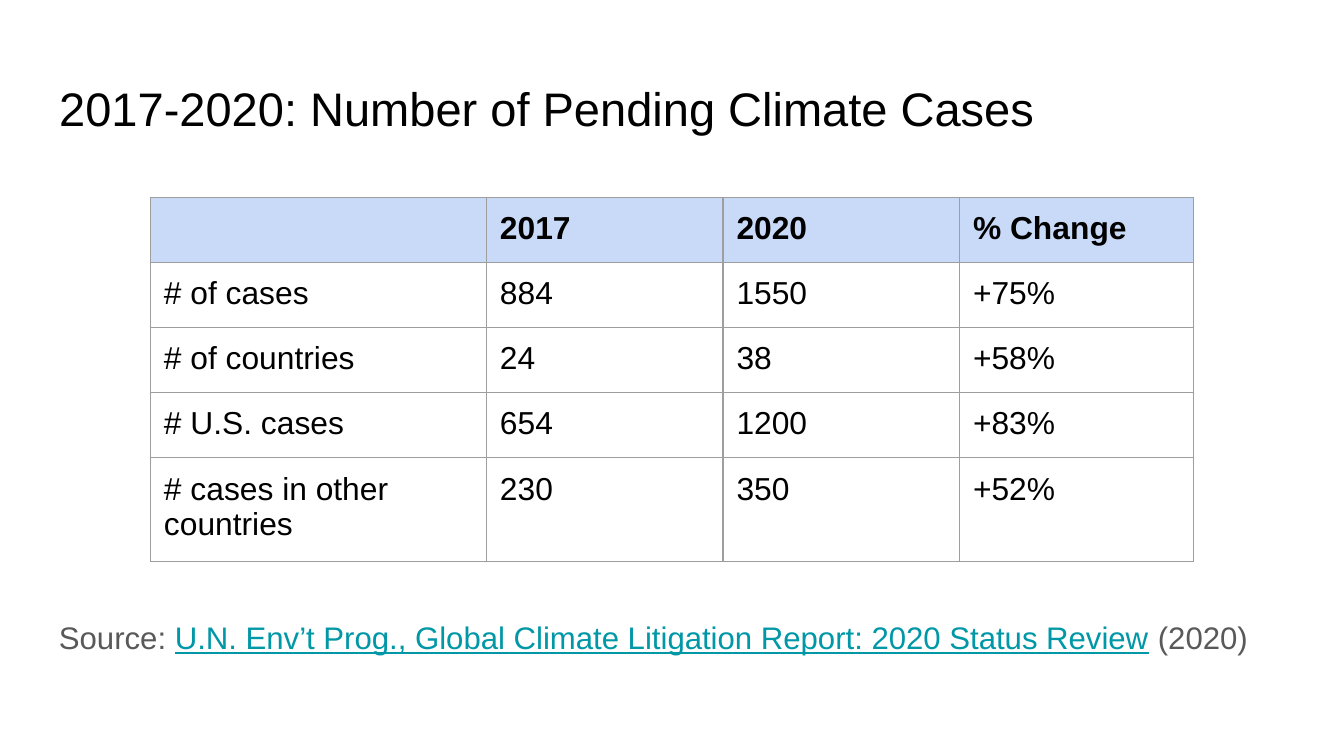
from lxml import etree
from pptx import Presentation
from pptx.dml.color import RGBColor
from pptx.enum.text import MSO_ANCHOR, PP_ALIGN
from pptx.oxml.ns import qn
from pptx.util import Inches, Pt

TOP = MSO_ANCHOR.TOP
MIDDLE = MSO_ANCHOR.MIDDLE
LEFT = PP_ALIGN.LEFT
FONT = "Arial"
BLACK, GRAY, TEAL = "000000", "595959", "0097A7"
HEAD, RULE = "C9DAF8", "9E9E9E"
PAD = Inches(0.1)
WIDTHS = [2.5, 1.76, 1.76, 1.74]
HEIGHTS = [0.48] * 4 + [0.77]
ROWS = [
    ["", "2017", "2020", "% Change"],
    ["# of cases", "884", "1550", "+75%"],
    ["# of countries", "24", "38", "+58%"],
    ["# U.S. cases", "654", "1200", "+83%"],
    ["# cases in other countries", "230", "350", "+52%"],
]
SOURCE = [
    ("Source: ", GRAY, False),
    ("U.N. Env’t Prog., Global Climate Litigation Report: 2020 Status Review", TEAL, True),
    (" (2020)", GRAY, False),
]


def paint(color):
    return RGBColor.from_string(color)


def style(font, size, color, bold=False):
    font.name = FONT
    font.size = Pt(size)
    font.bold = bold
    font.color.rgb = paint(color)


def pad(item):
    item.margin_left = item.margin_right = PAD
    item.margin_top = item.margin_bottom = PAD


def place(shape, left, top, width, height):
    shape.left, shape.top = Inches(left), Inches(top)
    shape.width, shape.height = Inches(width), Inches(height)


def frame(shape, anchor):
    box = shape.text_frame
    box.word_wrap = True
    box.vertical_anchor = anchor
    pad(box)
    line = box.paragraphs[0]
    line.alignment = LEFT
    return line


def add_title(slide, text):
    title = slide.shapes.title
    place(title, 0.34, 0.49, 9.32, 0.63)
    line = frame(title, TOP)
    line.text = text
    style(line.font, 25.2, BLACK)


def add_source(slide):
    box = slide.shapes.add_textbox(Inches(0.34), Inches(4.52), Inches(9.32), Inches(0.47))
    line = frame(box, MIDDLE)
    line.line_spacing = 0.95
    line.space_after = Pt(12)
    for text, color, under in SOURCE:
        run = line.add_run()
        run.text = text
        style(run.font, 16.7, color)
        run.font.underline = under


def add_border(cell):
    props = cell._tc.get_or_add_tcPr()
    for side in ("lnL", "lnR", "lnT", "lnB"):
        edge = etree.SubElement(props, qn(f"a:{side}"), w=str(Pt(0.75)))
        fill = etree.SubElement(edge, qn("a:solidFill"))
        etree.SubElement(fill, qn("a:srgbClr"), val=RULE)


def fill_cell(cell, text, head):
    pad(cell)
    cell.vertical_anchor = TOP
    line = cell.text_frame.paragraphs[0]
    line.text = text
    style(line.font, 17, BLACK, head)
    add_border(cell)
    if head:
        cell.fill.solid()
        cell.fill.fore_color.rgb = paint(HEAD)
    else:
        cell.fill.background()


def add_grid(slide):
    grid = slide.shapes.add_table(
        len(ROWS), len(WIDTHS), Inches(1.12), Inches(1.47),
        Inches(sum(WIDTHS)), Inches(sum(HEIGHTS)),
    ).table
    for col, width in zip(grid.columns, WIDTHS):
        col.width = Inches(width)
    for row, height in zip(grid.rows, HEIGHTS):
        row.height = Inches(height)
    for i, texts in enumerate(ROWS):
        for j, text in enumerate(texts):
            fill_cell(grid.cell(i, j), text, i == 0)


def main():
    deck = Presentation()
    deck.slide_width = Inches(10)
    deck.slide_height = deck.slide_width * 9 // 16
    slide = deck.slides.add_slide(deck.slide_layouts[5])
    add_title(slide, "2017-2020: Number of Pending Climate Cases")
    add_source(slide)
    add_grid(slide)
    deck.save("out.pptx")


if __name__ == "__main__":
    main()
